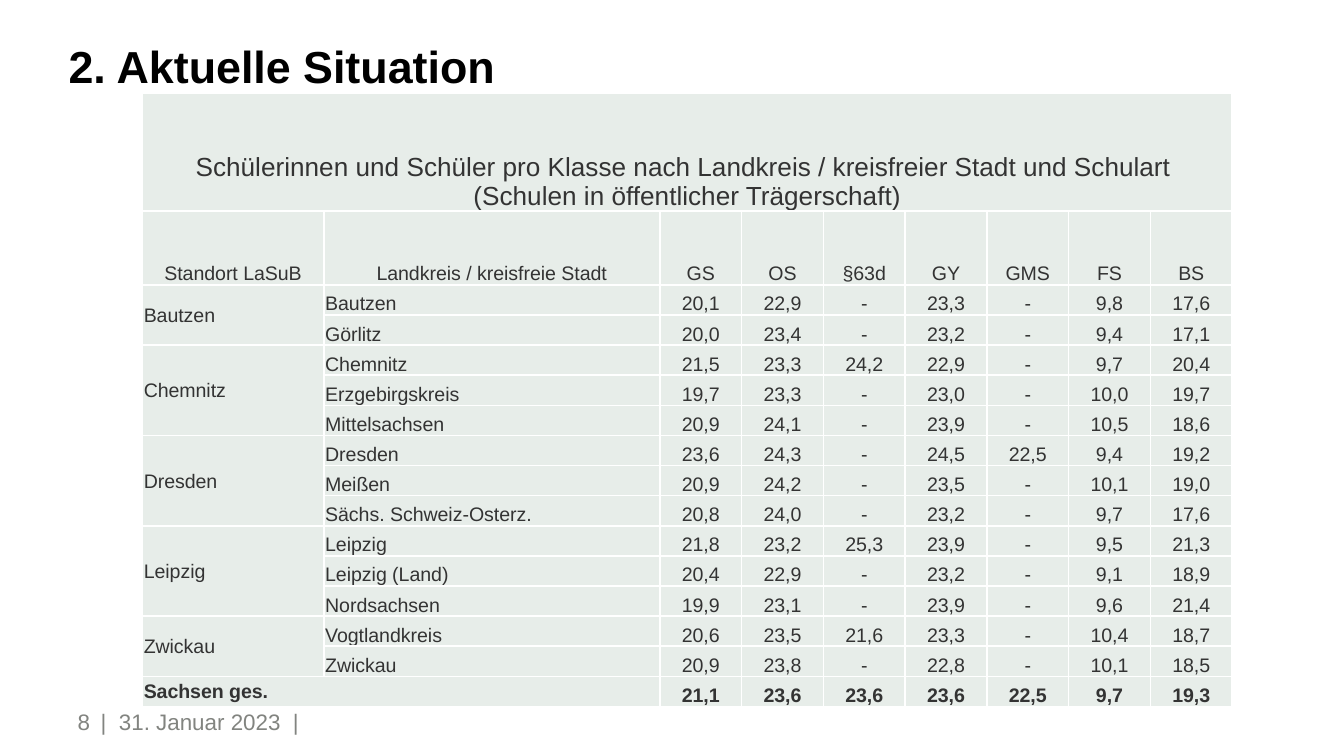
from copy import deepcopy

from lxml.etree import SubElement
from pptx import Presentation
from pptx.dml.color import RGBColor
from pptx.enum.text import MSO_ANCHOR as Anchor, MSO_AUTO_SIZE as AutoSize, PP_ALIGN as Align
from pptx.oxml.ns import qn
from pptx.util import Inches, Pt

COLORS = {"title": "000000", "text": "333333", "footer": "828480", "cell": "E7EDE9", "border": "FFFFFF"}
CAPTION = ("Schülerinnen und Schüler pro Klasse nach Landkreis / kreisfreier Stadt und Schulart \n"
           "(Schulen in öffentlicher Trägerschaft)")
HEADINGS = ["Standort LaSuB", "Landkreis / kreisfreie Stadt", "GS", "OS", "§63d", "GY", "GMS", "FS", "BS"]
LOCATIONS = {
    "Bautzen": [
        ("Bautzen", "20,1 22,9 - 23,3 - 9,8 17,6"),
        ("Görlitz", "20,0 23,4 - 23,2 - 9,4 17,1"),
    ],
    "Chemnitz": [
        ("Chemnitz", "21,5 23,3 24,2 22,9 - 9,7 20,4"),
        ("Erzgebirgskreis", "19,7 23,3 - 23,0 - 10,0 19,7"),
        ("Mittelsachsen", "20,9 24,1 - 23,9 - 10,5 18,6"),
    ],
    "Dresden": [
        ("Dresden", "23,6 24,3 - 24,5 22,5 9,4 19,2"),
        ("Meißen", "20,9 24,2 - 23,5 - 10,1 19,0"),
        ("Sächs. Schweiz-Osterz.", "20,8 24,0 - 23,2 - 9,7 17,6"),
    ],
    "Leipzig": [
        ("Leipzig", "21,8 23,2 25,3 23,9 - 9,5 21,3"),
        ("Leipzig (Land)", "20,4 22,9 - 23,2 - 9,1 18,9"),
        ("Nordsachsen", "19,9 23,1 - 23,9 - 9,6 21,4"),
    ],
    "Zwickau": [
        ("Vogtlandkreis", "20,6 23,5 21,6 23,3 - 10,4 18,7"),
        ("Zwickau", "20,9 23,8 - 22,8 - 10,1 18,5"),
    ],
}
TOTALS = "21,1 23,6 23,6 23,6 22,5 9,7 19,3"


def write(frame, text, size=10.5, color="text", bold=False, align=Align.LEFT):
    """Fill a text frame with one formatted paragraph."""
    paragraph = frame.paragraphs[0]
    paragraph.text = text
    paragraph.alignment = align
    for run in paragraph.runs:
        run.font.name = "Arial"
        run.font.size = Pt(size)
        run.font.bold = bold
        run.font.color.rgb = RGBColor.from_string(COLORS[color])
    for line_break in paragraph._p.findall(qn("a:br")):
        line_break.append(deepcopy(paragraph.runs[0]._r.rPr))


class Deck:
    """Holds the presentation style and the current slide."""

    def __init__(self, width, height):
        self.presentation = Presentation()
        self.presentation.slide_width = Inches(width)
        self.presentation.slide_height = Inches(height)
        self.slide = self.presentation.slides.add_slide(self.presentation.slide_layouts[5])

    def place(self, holder, bounds, anchor):
        holder.left, holder.top, holder.width, holder.height = map(Inches, bounds)
        frame = holder.text_frame
        frame.margin_left = frame.margin_right = frame.margin_top = frame.margin_bottom = 0
        frame.word_wrap = True
        frame.auto_size = AutoSize.NONE
        frame.vertical_anchor = anchor
        return frame

    def title(self, text, bounds):
        frame = self.place(self.slide.shapes.title, bounds, Anchor.BOTTOM)
        write(frame, text, size=24, color="title", bold=True)

    def footer(self, text, bounds, align=Align.LEFT):
        box = self.slide.shapes.add_textbox(*map(Inches, bounds))
        write(self.place(box, bounds, Anchor.MIDDLE), text, size=12, color="footer", align=align)

    def style_cell(self, cell):
        cell.margin_left = cell.margin_right = cell.margin_top = Inches(0.01)
        cell.margin_bottom = 0
        cell.vertical_anchor = Anchor.BOTTOM
        properties = cell._tc.get_or_add_tcPr()
        for side in ("lnL", "lnR", "lnT", "lnB"):
            line = SubElement(properties, qn(f"a:{side}"), w=str(Pt(1)))
            fill = SubElement(line, qn("a:solidFill"))
            SubElement(fill, qn("a:srgbClr"), val=COLORS["border"])
        cell.fill.solid()
        cell.fill.fore_color.rgb = RGBColor.from_string(COLORS["cell"])

    def table(self, bounds, column_widths, row_heights):
        grid = self.slide.shapes.add_table(
            len(row_heights), len(column_widths), *map(Inches, bounds)).table
        grid.first_row = grid.horz_banding = False
        for column, width in zip(grid.columns, column_widths):
            column.width = Inches(width)
        for row, height in zip(grid.rows, row_heights):
            row.height = Inches(height)
        for cell in grid.iter_cells():
            self.style_cell(cell)
        return grid


def fill_values(grid, row, values, bold=False):
    """Write one row of class sizes."""
    for column, value in enumerate(values.split(), start=2):
        write(grid.cell(row, column).text_frame, value, bold=bold, align=Align.CENTER)


def fill_group(grid, first, last, label, last_column=0, bold=False):
    """Merge the label cells of a group and write its label."""
    cell = grid.cell(first, 0)
    cell.merge(grid.cell(last, last_column))
    cell.vertical_anchor = Anchor.MIDDLE
    write(cell.text_frame, label, bold=bold)


def main():
    """Build the slide on class sizes."""
    deck = Deck(10, 10 * 9 / 16)
    deck.title("2. Aktuelle Situation", (0.51, 0.36, 7.25, 0.33))
    deck.footer("|  31. Januar 2023  |", (0.75, 5.11, 4.96, 0.52))
    deck.footer("8", (0, 5.11, 0.67, 0.52), align=Align.RIGHT)

    sizes = deck.table((1.06, 0.69, 8.11, 4.57), [1.35, 2.5] + [4.26 / 7] * 7,
                       [0.88, 0.55] + [3.14 / 14] * 14)
    sizes.cell(0, 0).merge(sizes.cell(0, 8))
    write(sizes.cell(0, 0).text_frame, CAPTION, size=14, align=Align.CENTER)
    for column, heading in enumerate(HEADINGS):
        write(sizes.cell(1, column).text_frame, heading, align=Align.CENTER)

    row = 2
    for location, districts in LOCATIONS.items():
        fill_group(sizes, row, row + len(districts) - 1, location)
        for district, values in districts:
            write(sizes.cell(row, 1).text_frame, district)
            fill_values(sizes, row, values)
            row += 1
    fill_group(sizes, row, row, "Sachsen ges.", last_column=1, bold=True)
    fill_values(sizes, row, TOTALS, bold=True)

    deck.presentation.save("out.pptx")


if __name__ == "__main__":
    main()
